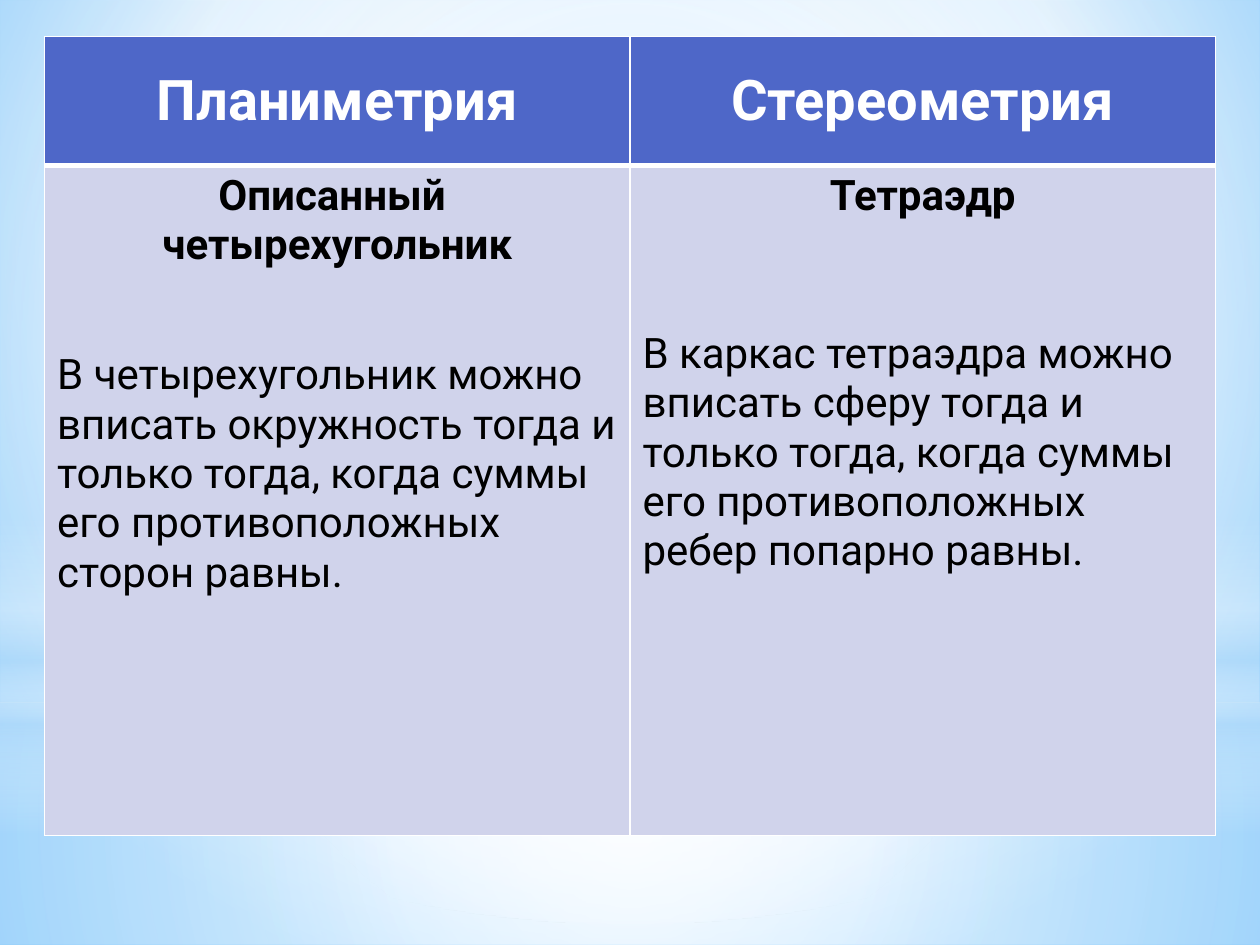
from lxml.etree import SubElement
from pptx import Presentation
from pptx.dml.color import RGBColor
from pptx.enum.shapes import MSO_SHAPE as Preset
from pptx.enum.text import MSO_ANCHOR as Anchor, PP_ALIGN as Align
from pptx.oxml.ns import qn
from pptx.util import Cm, Pt

FONT = "Roboto"
COLORS = {
    "header": "4E67C8", "body": "D0D3EB", "white": "FFFFFF", "text": "000000",
    "sky": "B4DCFA", "light_blue": "9ED5FF", "deep_blue": "5BB9FF",
}
COLUMNS = [
    ("Планиметрия", ["Описанный ", "четырехугольник"], 46,
     "В четырехугольник можно вписать окружность тогда и только тогда, "
     "когда суммы его противоположных сторон равны."),
    ("Стереометрия", ["Тетраэдр"], 62,
     "В каркас тетраэдра можно вписать сферу тогда и только тогда, "
     "когда суммы его противоположных ребер попарно равны."),
]


def set_gradient(parent, stops, focus=None):
    """Replace the solid fill of parent by a radial or a downward gradient."""
    solid = parent.find(qn("a:solidFill"))
    gradient = SubElement(parent, qn("a:gradFill"), rotWithShape="1")
    parent.replace(solid, gradient)
    stop_list = SubElement(gradient, qn("a:gsLst"))
    for position, color, opacity in stops:
        stop = SubElement(stop_list, qn("a:gs"), pos=str(position * 1000))
        rgb = SubElement(stop, qn("a:srgbClr"), val=COLORS[color])
        if opacity < 100:
            SubElement(rgb, qn("a:alpha"), val=str(opacity * 1000))
    if focus:
        circle = SubElement(gradient, qn("a:path"), path="circle")
        sides = {side: str(value * 1000) for side, value in zip("ltrb", focus)}
        SubElement(circle, qn("a:fillToRect"), sides)
    else:
        SubElement(gradient, qn("a:lin"), ang="5400000", scaled="0")


def add_glow(slide, preset, top, height, stops, focus=(50, 50, 50, 50)):
    """Add a translucent shape across the full width of the slide."""
    shape = slide.shapes.add_shape(preset, 0, Cm(top), Cm(25.4), Cm(height))
    shape.shadow.inherit = False
    shape.line.fill.background()
    shape.fill.solid()
    set_gradient(shape.element.spPr, stops, focus)


def add_sky(slide):
    """Paint the slide background and its layers of light."""
    slide.background.fill.solid()
    set_gradient(
        slide.element.find(".//" + qn("p:bgPr")),
        [(0, "light_blue", 100), (60, "white", 100), (100, "deep_blue", 100)],
        (20, 10, 20, 60))
    add_glow(slide, Preset.RECTANGLE, 14.17, 4.88,
             [(0, "white", 91), (37, "white", 76), (100, "sky", 79)])
    add_glow(slide, Preset.RECTANGLE, 0, 14.17,
             [(0, "white", 89), (48, "white", 62), (100, "sky", 79)])
    add_glow(slide, Preset.RECTANGLE, 10.46, 6.35,
             [(0, "white", 0), (29, "white", 30), (45, "sky", 40),
              (55, "white", 26), (65, "sky", 60), (100, "white", 0)], None)
    add_glow(slide, Preset.OVAL, 4.45, 14.17,
             [(0, "white", 100), (56, "white", 0)])


def add_text(paragraph, text, size, color, bold=True, align=Align.CENTER):
    """Write one formatted run into the paragraph."""
    paragraph.alignment = align
    run = paragraph.add_run()
    run.text = text
    run.font.name = FONT
    run.font.size = Pt(size)
    run.font.bold = bold
    run.font.color.rgb = RGBColor.from_string(COLORS[color])


def style_cell(cell, color, top=1, bottom=1):
    """Fill the cell and draw its white borders, widths in points."""
    cell.fill.solid()
    cell.fill.fore_color.rgb = RGBColor.from_string(COLORS[color])
    properties = cell._tc.get_or_add_tcPr()
    widths = {"a:lnL": 1, "a:lnR": 1, "a:lnT": top, "a:lnB": bottom}
    for index, (tag, width) in enumerate(widths.items()):
        border = SubElement(properties, qn(tag), w=str(Pt(width)))
        fill = SubElement(border, qn("a:solidFill"))
        SubElement(fill, qn("a:srgbClr"), val=COLORS["white"])
        properties.insert(index, border)


def fill_body(cell, heading, gap, statement):
    """Write the heading lines and, after the gap, the statement."""
    frame = cell.text_frame
    paragraph = frame.paragraphs[0]
    for line in heading:
        add_text(paragraph, line, 24, "text")
        last_line, paragraph = paragraph, frame.add_paragraph()
    last_line.space_after = Pt(gap)
    add_text(paragraph, statement, 24, "text", bold=False, align=Align.LEFT)


def add_comparison(slide, left, top, width, row_heights):
    """Add the table that sets plane geometry beside solid geometry."""
    frame = slide.shapes.add_table(
        len(row_heights), len(COLUMNS), Cm(left), Cm(top), Cm(width), Cm(sum(row_heights)))
    table = frame.table
    for row, height in zip(table.rows, row_heights):
        row.height = Cm(height)
    for index, (title, heading, gap, statement) in enumerate(COLUMNS):
        table.columns[index].width = Cm(width / len(COLUMNS))
        header, body = table.cell(0, index), table.cell(1, index)
        style_cell(header, "header", bottom=3)
        style_cell(body, "body", top=3)
        header.vertical_anchor = Anchor.MIDDLE
        add_text(header.text_frame.paragraphs[0], title, 32, "white")
        fill_body(body, heading, gap, statement)


def main():
    """Build and save the presentation."""
    presentation = Presentation()
    presentation.slide_width, presentation.slide_height = Cm(25.4), Cm(19.05)
    slide = presentation.slides.add_slide(presentation.slide_layouts[6])
    add_sky(slide)
    add_comparison(slide, 0.9, 0.74, 23.6, [2.59, 13.51])
    presentation.save("out.pptx")


if __name__ == "__main__":
    main()
